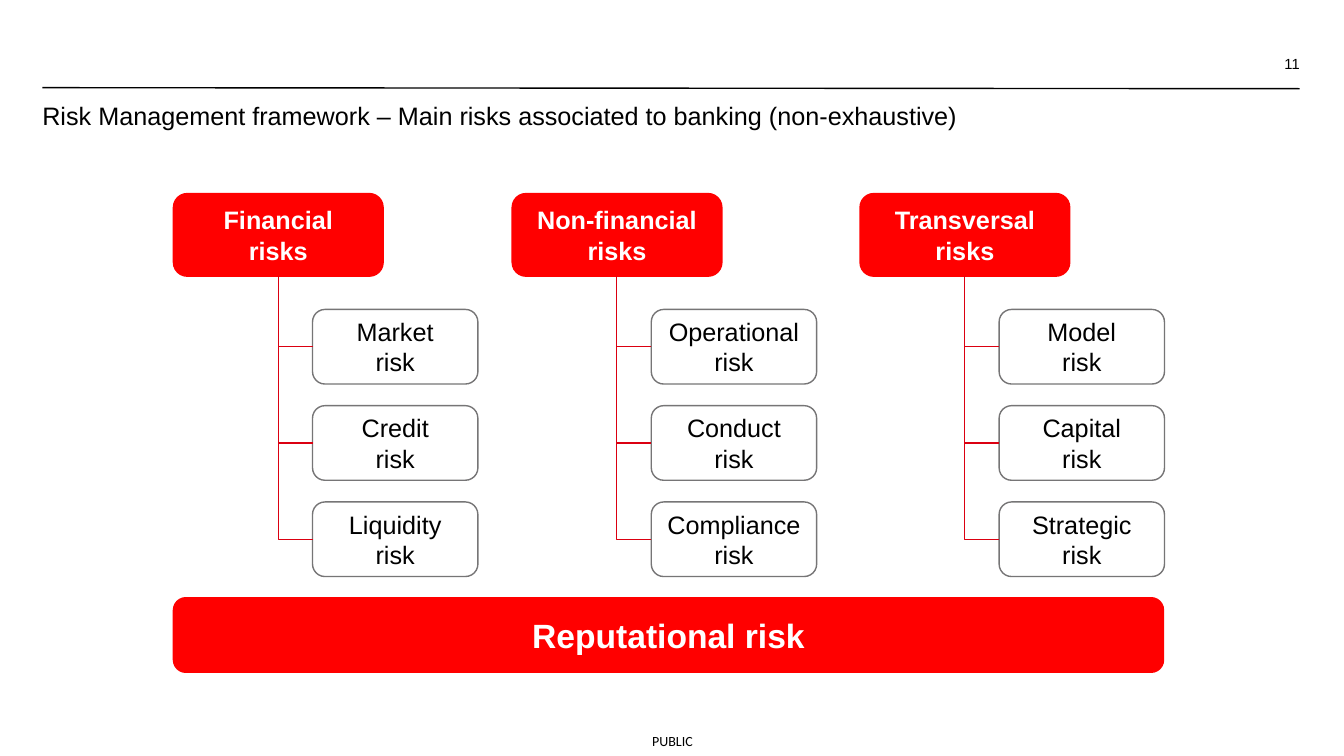
from pptx import Presentation
from pptx.dml.color import RGBColor
from pptx.enum.shapes import MSO_CONNECTOR, MSO_SHAPE
from pptx.enum.text import MSO_ANCHOR, PP_ALIGN
from pptx.util import Inches, Pt
from lxml import etree

COLORS = {"red": "FF0000", "branch": "DB0011", "gray": "767576",
          "white": "FFFFFF", "black": "000000"}
RISKS = [
    (1.72, "Financial", ["Market", "Credit", "Liquidity"]),
    (5.08, "Non-financial", ["Operational", "Conduct", "Compliance"]),
    (8.53, "Transversal", ["Model", "Capital", "Strategic"]),
]
A = "http://schemas.openxmlformats.org/drawingml/2006/main"


def rgb(name):
    return RGBColor.from_string(COLORS[name])


def write(tf, text, size=18, color="black", bold=False, font="Arial",
          align=PP_ALIGN.LEFT, anchor=MSO_ANCHOR.TOP):
    tf.word_wrap = True
    tf.vertical_anchor = anchor
    for i, line in enumerate(text.split("\n")):
        p = tf.add_paragraph() if i else tf.paragraphs[0]
        p.alignment = align
        r = p.add_run()
        r.text = line
        r.font.name = font
        r.font.size = Pt(size)
        r.font.bold = bold
        r.font.color.rgb = rgb(color)


def add_label(s, x, y, w, h, text, **fmt):
    tf = s.shapes.add_textbox(Inches(x), Inches(y), Inches(w), Inches(h)).text_frame
    tf.margin_left = tf.margin_right = tf.margin_top = tf.margin_bottom = 0
    write(tf, text, **fmt)


def add_box(s, x, y, w, h, text, fill, line, **fmt):
    sp = s.shapes.add_shape(MSO_SHAPE.ROUNDED_RECTANGLE,
                            Inches(x), Inches(y), Inches(w), Inches(h))
    sp.shadow.inherit = False
    sp.fill.solid()
    sp.fill.fore_color.rgb = rgb(fill)
    sp.line.color.rgb = rgb(line)
    sp.line.width = Pt(1)
    write(sp.text_frame, text, align=PP_ALIGN.CENTER, anchor=MSO_ANCHOR.MIDDLE, **fmt)
    return sp


def style_line(cx, color, width):
    cx.line.color.rgb = rgb(color)
    cx.line.width = Pt(width)
    etree.SubElement(cx._element.spPr, f"{{{A}}}effectLst")


def add_branch(s, parent, child):
    x1, y1 = parent.left + parent.width // 2, parent.top + parent.height
    x2, y2 = child.left, child.top + child.height // 2
    cx = s.shapes.add_connector(MSO_CONNECTOR.ELBOW, x1, y1, x2, y2)
    cx.begin_connect(parent, 2)
    cx.end_connect(child, 1)
    run, drop = x2 - x1, y2 - y1
    cx.left, cx.top = (x1 + x2 - drop) // 2, (y1 + y2 - run) // 2
    cx.width, cx.height = drop, run
    xfrm = cx._element.spPr.find(f"{{{A}}}xfrm")
    xfrm.set("rot", str(270 * 60000))
    xfrm.set("flipH", "1")
    cx._element.spPr.find(f"{{{A}}}prstGeom").set("prst", "bentConnector2")
    style_line(cx, "branch", 0.75)


def add_risk_column(s, x, y, w, group, kinds):
    head = add_box(s, x, y, w, 0.82, f"{group}\nrisks", "red", "red",
                   color="white", bold=True)
    for i, kind in enumerate(kinds):
        child = add_box(s, x + 1.38, y + 1.15 + i * 0.955, 1.64, 0.74,
                        f"{kind}\nrisk", "white", "gray")
        add_branch(s, head, child)


def add_frame(s, x, w):
    rule = s.shapes.add_connector(MSO_CONNECTOR.STRAIGHT, Inches(x), Inches(0.87),
                                  Inches(x + w), Inches(0.88))
    style_line(rule, "black", 1)
    add_label(s, x, 0.99, w, 0.35, "Risk Management framework – Main risks "
              "associated to banking (non-exhaustive)")
    add_label(s, x + w - 2.97, 0.54, 2.97, 0.33, "11", size=10.5, align=PP_ALIGN.RIGHT)
    add_label(s, 6.32, 7.27, 0.7, 0.17, "PUBLIC", size=10, font="Calibri",
              align=PP_ALIGN.CENTER, anchor=MSO_ANCHOR.MIDDLE)


def main():
    prs = Presentation()
    prs.slide_width, prs.slide_height = Inches(13.33), Inches(7.5)
    s = prs.slides.add_slide(prs.slide_layouts[6])
    add_frame(s, 0.42, 12.47)
    for x, group, kinds in RISKS:
        add_risk_column(s, x, 1.92, 2.08, group, kinds)
    add_box(s, 1.72, 5.93, 9.82, 0.74, "Reputational risk", "red", "red",
            size=24, color="white", bold=True)
    prs.save("out.pptx")


if __name__ == "__main__":
    main()
